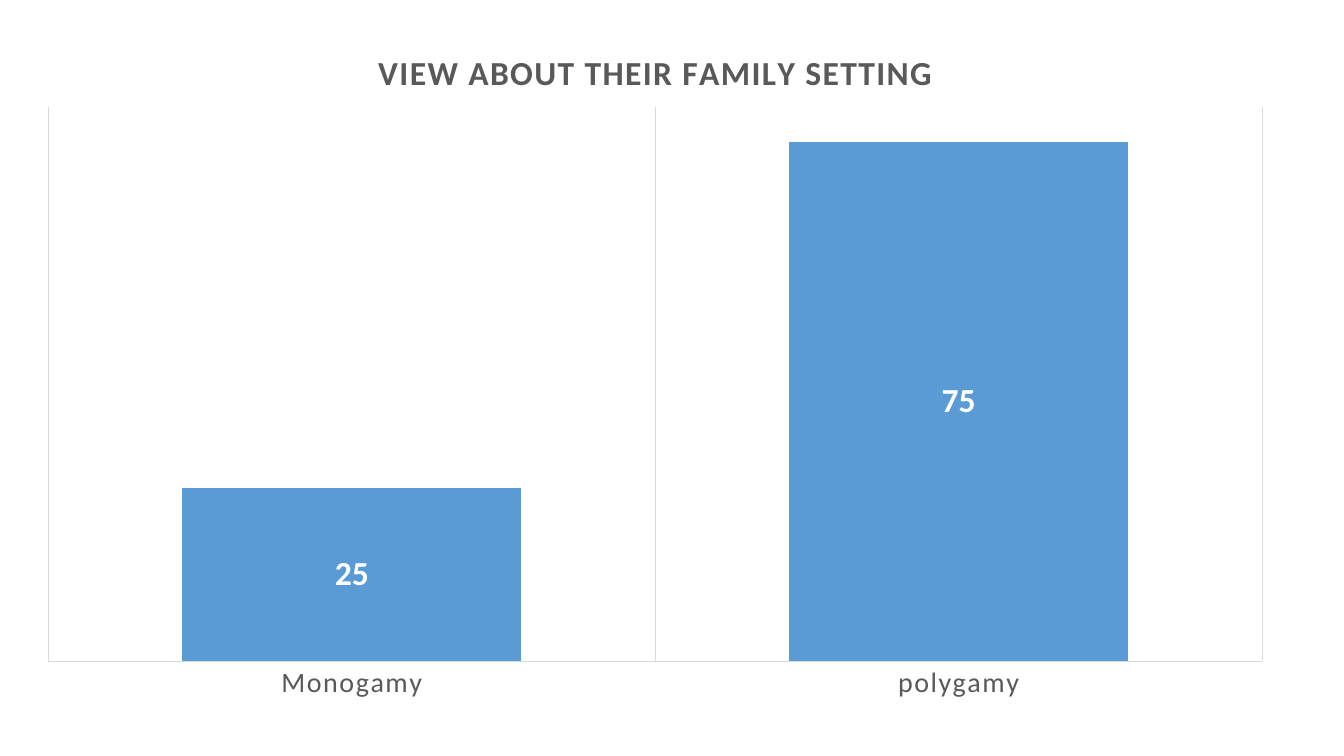
from lxml import etree
from pptx import Presentation
from pptx.chart.chart import Chart
from pptx.chart.data import CategoryChartData
from pptx.dml.color import RGBColor
from pptx.enum.chart import XL_CHART_TYPE as ChartType
from pptx.enum.chart import XL_LABEL_POSITION as LabelPosition
from pptx.enum.chart import XL_TICK_MARK as TickMark
from pptx.oxml.ns import qn
from pptx.text.text import Font
from pptx.util import Inches, Pt

GREY = "595959"
RULE = "D9D9D9"
BLUE = "5B9BD5"
WHITE = "FFFFFF"
FAMILY_SETTINGS = {"Monogamy": 25, "polygamy": 75}


def rgb(value: str) -> RGBColor:
    return RGBColor.from_string(value)


def style_font(font: Font, size: float, color: str, bold: bool = False) -> None:
    font.name = "Calibri"
    font.size = Pt(size)
    font.bold = bold
    font.color.rgb = rgb(color)


def set_plot_area(chart: Chart, **fractions: float) -> None:
    """Fix the inner plot area as fractions of the chart frame."""
    plot_area = chart.element.find(".//" + qn("c:plotArea"))
    for automatic in plot_area.findall(qn("c:layout")):
        plot_area.remove(automatic)
    layout = etree.Element(qn("c:layout"))
    manual = etree.SubElement(layout, qn("c:manualLayout"))
    settings = {"layoutTarget": "inner", "xMode": "edge", "yMode": "edge", **fractions}
    for tag, value in settings.items():
        etree.SubElement(manual, qn(f"c:{tag}"), val=str(value))
    plot_area.insert(0, layout)


def add_title(chart: Chart, wording: str) -> None:
    chart.has_title = True
    chart.chart_title.include_in_layout = False
    run = chart.chart_title.text_frame.paragraphs[0].add_run()
    run.text = wording
    style_font(run.font, 24, GREY, bold=True)
    run.font._element.set("spc", "100")


def style_axes(chart: Chart) -> None:
    settings_axis = chart.category_axis
    settings_axis.major_tick_mark = TickMark.NONE
    settings_axis.minor_tick_mark = TickMark.NONE
    settings_axis.has_major_gridlines = True
    for line in (settings_axis.format.line, settings_axis.major_gridlines.format.line):
        line.color.rgb = rgb(RULE)
        line.width = Pt(0.75)
    names_font = settings_axis.tick_labels.font
    style_font(names_font, 20, GREY)
    names_font._element.set("spc", "100")

    count_axis = chart.value_axis
    count_axis.minimum_scale = 0
    count_axis.maximum_scale = 80
    count_axis.has_major_gridlines = False
    count_axis.visible = False


def style_columns(chart: Chart) -> None:
    columns = chart.plots[0]
    columns.gap_width = 79
    columns.overlap = 100
    columns.vary_by_categories = False
    answers = columns.series[0]
    answers.format.fill.solid()
    answers.format.fill.fore_color.rgb = rgb(BLUE)
    labels = answers.data_labels
    labels.show_value = True
    labels.position = LabelPosition.CENTER
    style_font(labels.font, 24, WHITE, bold=True)


def main() -> None:
    deck = Presentation()
    deck.slide_width, deck.slide_height = Inches(13.33), Inches(7.5)
    slide = deck.slides.add_slide(deck.slide_layouts[6])

    answers = CategoryChartData()
    answers.categories = list(FAMILY_SETTINGS)
    answers.add_series("Series 1", list(FAMILY_SETTINGS.values()))
    chart = slide.shapes.add_chart(
        ChartType.COLUMN_STACKED,
        Inches(0.23), Inches(0.24), Inches(12.54), Inches(6.87),
        answers,
    ).chart
    chart.has_legend = False
    style_font(chart.font, 10, "000000")
    add_title(chart, "VIEW ABOUT THEIR FAMILY SETTING")
    style_axes(chart)
    style_columns(chart)
    set_plot_area(chart, x=0.02, y=0.12, w=0.96, h=0.8)

    deck.save("out.pptx")


if __name__ == "__main__":
    main()
